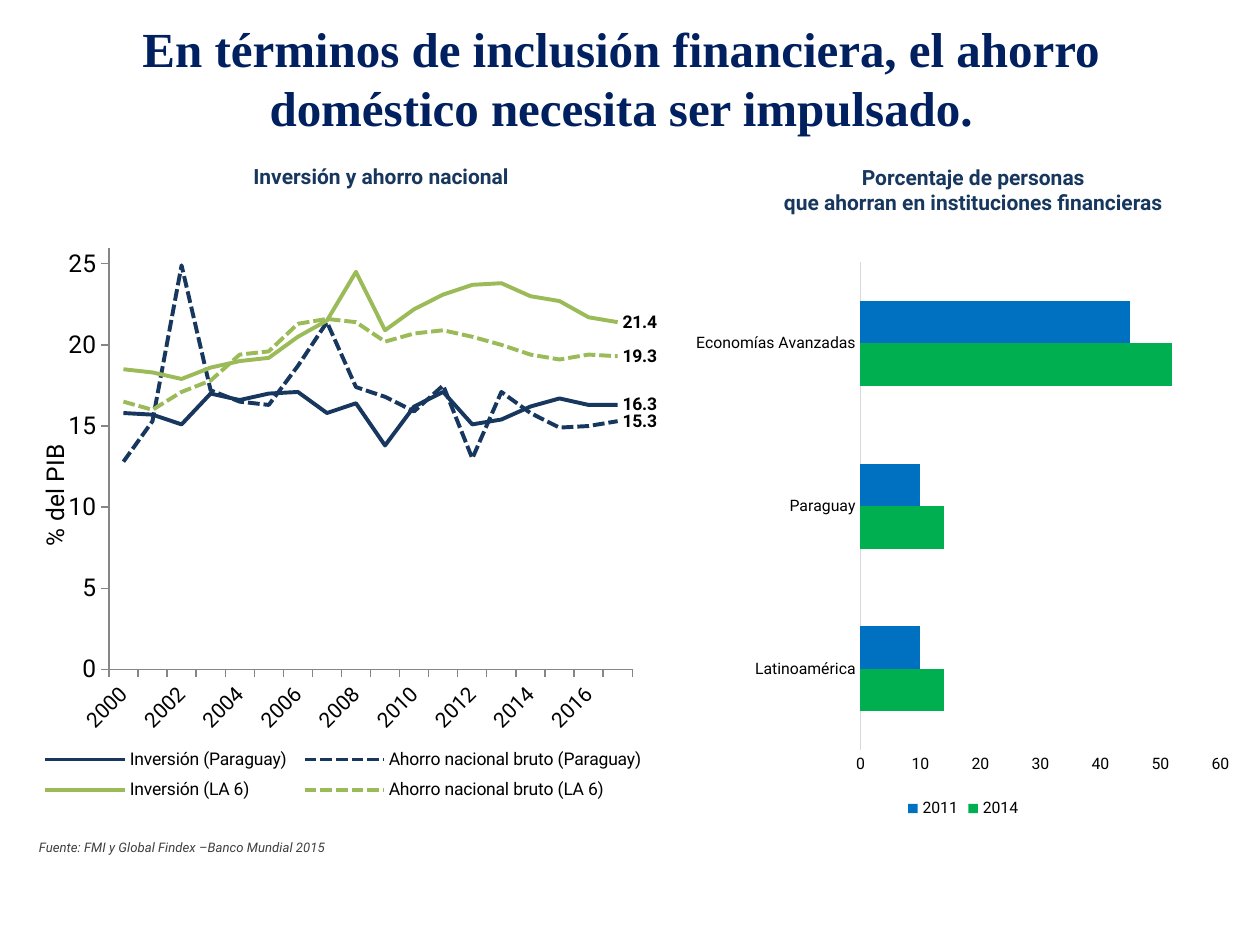
from lxml import etree
from pptx import Presentation
from pptx.chart.data import CategoryChartData
from pptx.dml.color import RGBColor
from pptx.enum import chart as ch, dml, text
from pptx.oxml import parse_xml
from pptx.oxml.ns import nsdecls, qn
from pptx.util import Inches, Pt

C = {"navy": "17375E", "title": "002060", "gray": "404040", "black": "000000",
     "lime": "9BBB59", "green": "00B050", "blue": "0070C0",
     "axis": "868686", "pale": "D9D9D9"}


def add_text(box, lines, size, color, font="Roboto", bold=False, italic=False,
             align=text.PP_ALIGN.CENTER, insets=(0.07, 0.04)):
    tb = s.shapes.add_textbox(*[Inches(v) for v in box])
    tf = tb.text_frame
    tf.word_wrap = True
    tf.vertical_anchor = text.MSO_ANCHOR.MIDDLE
    tf.margin_left = tf.margin_right = Inches(insets[0])
    tf.margin_top = tf.margin_bottom = Inches(insets[1])
    for i, line in enumerate(lines):
        p = tf.paragraphs[0] if i == 0 else tf.add_paragraph()
        p.alignment = align
        r = p.add_run()
        r.text = line
        r.font.name, r.font.size = font, Pt(size)
        r.font.bold, r.font.italic = bold, italic
        r.font.color.rgb = RGBColor.from_string(C[color])


def set_layout(parent, before, x, y, w=None, h=None, inner=False):
    for old in parent.findall(qn("c:layout")):
        parent.remove(old)
    target = '<c:layoutTarget val="inner"/>' if inner else ""
    values = {"x": x, "y": y, "w": w, "h": h}
    modes = '<c:xMode val="edge"/><c:yMode val="edge"/>'
    sizes = "".join(f'<c:{k} val="{v}"/>' for k, v in values.items() if v is not None)
    layout = parse_xml(f'<c:layout {nsdecls("c")}><c:manualLayout>{target}{modes}{sizes}'
                       '</c:manualLayout></c:layout>')
    parent.find(qn(before)).addprevious(layout)


prs = Presentation()
prs.slide_width, prs.slide_height = Inches(10), Inches(7.5)
s = prs.slides.add_slide(prs.slide_layouts[6])

add_text((0.76, 1.21, 4.53, 0.37), ["Inversión y ahorro nacional"], 12, "navy", bold=True)
add_text((5.7, 1.32, 4.05, 0.37),
         ["Porcentaje de personas", "que ahorran en instituciones financieras"],
         12, "navy", bold=True)
add_text((0.21, 6.61, 5.08, 0.23), ["Fuente: FMI y Global Findex –Banco Mundial 2015"],
         7.5, "gray", italic=True, align=text.PP_ALIGN.LEFT, insets=(0.1, 0.05))

line_series = [
    ("Inversión (Paraguay)", "navy", False,
     [15.8, 15.7, 15.1, 17.0, 16.6, 17.0, 17.1, 15.8, 16.4,
      13.8, 16.2, 17.1, 15.1, 15.4, 16.2, 16.7, 16.3, 16.3]),
    ("Ahorro nacional bruto (Paraguay)", "navy", True,
     [12.8, 15.3, 24.9, 17.2, 16.5, 16.3, 18.7, 21.4, 17.4,
      16.8, 15.9, 17.5, 13.0, 17.1, 15.8, 14.9, 15.0, 15.3]),
    ("Inversión (LA 6)", "lime", False,
     [18.5, 18.3, 17.9, 18.6, 19.0, 19.2, 20.5, 21.5, 24.5,
      20.9, 22.2, 23.1, 23.7, 23.8, 23.0, 22.7, 21.7, 21.4]),
    ("Ahorro nacional bruto (LA 6)", "lime", True,
     [16.5, 16.0, 17.1, 17.8, 19.4, 19.6, 21.3, 21.6, 21.4,
      20.2, 20.7, 20.9, 20.5, 20.0, 19.4, 19.1, 19.4, 19.3]),
]
bar_series = [("2014", "green", [14, 14, 52]), ("2011", "blue", [10, 10, 45])]

line_data = CategoryChartData(number_format="0.0")
line_data.categories = [str(year) for year in range(2000, 2018)]
for name, color, dashed, values in line_series:
    line_data.add_series(name, values)
bar_data = CategoryChartData(number_format="0")
bar_data.categories = ["Latinoamérica", "Paraguay", "Economías Avanzadas"]
for name, color, values in bar_series:
    bar_data.add_series(name, values)

charts = []
for kind, box, data, size, legend_size, cat_size, val_size, top, step, tick, plot in [
    (ch.XL_CHART_TYPE.LINE, (0.16, 1.78, 5.18, 4.75), line_data, 14, 10, 12, 14, 26, 5,
     ch.XL_TICK_MARK.OUTSIDE, (0.136, 0.039, 0.802, 0.705)),
    (ch.XL_CHART_TYPE.BAR_CLUSTERED, (5.44, 1.99, 4.41, 4.54), bar_data, 10, 9, 9, 9, 60, 10,
     ch.XL_TICK_MARK.NONE, (0.315, 0.02, 0.648, 0.853)),
]:
    chart = s.shapes.add_chart(kind, *[Inches(v) for v in box], data).chart
    chart.has_title = False
    chart.has_legend = True
    chart.legend.position = ch.XL_LEGEND_POSITION.BOTTOM
    chart.legend.include_in_layout = False
    cat, val = chart.category_axis, chart.value_axis
    for part, part_size in [(chart, size), (chart.legend, legend_size),
                            (cat.tick_labels, cat_size), (val.tick_labels, val_size)]:
        part.font.name, part.font.size = "Roboto", Pt(part_size)
        part.font.color.rgb = RGBColor.from_string(C["black"])
    for axis in (cat, val):
        axis.has_major_gridlines = False
        axis.major_tick_mark = tick
        axis.minor_tick_mark = ch.XL_TICK_MARK.NONE
        axis.format.line.width = Pt(0.75)
        axis.format.line.color.rgb = RGBColor.from_string(C["axis"])
    val.minimum_scale, val.maximum_scale, val.major_unit = 0, top, step
    val.tick_labels.number_format = "0"
    val.tick_labels.number_format_is_linked = False
    plot_area = chart._chartSpace.chart.plotArea
    first = "c:lineChart" if kind == ch.XL_CHART_TYPE.LINE else "c:barChart"
    set_layout(plot_area, first, *plot, inner=True)
    chart.plots[0].vary_by_categories = False
    charts.append(chart)
line_chart, bar_chart = charts

for series, (name, color, dashed, values) in zip(line_chart.plots[0].series, line_series):
    series.smooth = False
    series.marker.style = ch.XL_MARKER_STYLE.NONE
    series.format.line.width = Pt(2.25)
    series.format.line.color.rgb = RGBColor.from_string(C[color])
    if dashed:
        series.format.line.dash_style = dml.MSO_LINE.SQUARE_DOT
    label = series.points[len(values) - 1].data_label
    label.font.name, label.font.size, label.font.bold = "Roboto", Pt(10), True
    label.font.color.rgb = RGBColor.from_string(C["black"])
    label.position = ch.XL_LABEL_POSITION.RIGHT

cat_xml = line_chart.category_axis._element
cat_xml.find(qn("c:txPr")).find(qn("a:bodyPr")).set("rot", "-2700000")
skip = etree.Element(qn("c:tickLblSkip"), val="2")
mark = etree.Element(qn("c:tickMarkSkip"), val="1")
cat_xml.find(qn("c:noMultiLvlLbl")).addprevious(skip)
skip.addnext(mark)

axis_title = line_chart.value_axis.axis_title
r = axis_title.text_frame.paragraphs[0].add_run()
r.text = "% del PIB"
r.font.name, r.font.size, r.font.bold = "Roboto", Pt(14), False
r.font.color.rgb = RGBColor.from_string(C["black"])
axis_title.text_frame._txBody.find(qn("a:bodyPr")).set("rot", "-5400000")
set_layout(axis_title._element, "c:overlay", 0.02, 0.36)
set_layout(line_chart.legend._element, "c:overlay", 0.02, 0.86, 0.95, 0.12)

bar_chart.plots[0].gap_width = 182
bar_chart.plots[0].overlap = 0
bar_chart.category_axis.format.line.color.rgb = RGBColor.from_string(C["pale"])
bar_chart.value_axis.format.line.fill.background()
for series, (name, color, values) in zip(bar_chart.plots[0].series, bar_series):
    series.format.fill.solid()
    series.format.fill.fore_color.rgb = RGBColor.from_string(C[color])

add_text((0.36, 0.21, 9.14, 0.81),
         ["En términos de inclusión financiera, el ahorro doméstico necesita ser impulsado."],
         28, "title", font="Times New Roman", bold=True, insets=(0.1, 0.05))

prs.save("out.pptx")
